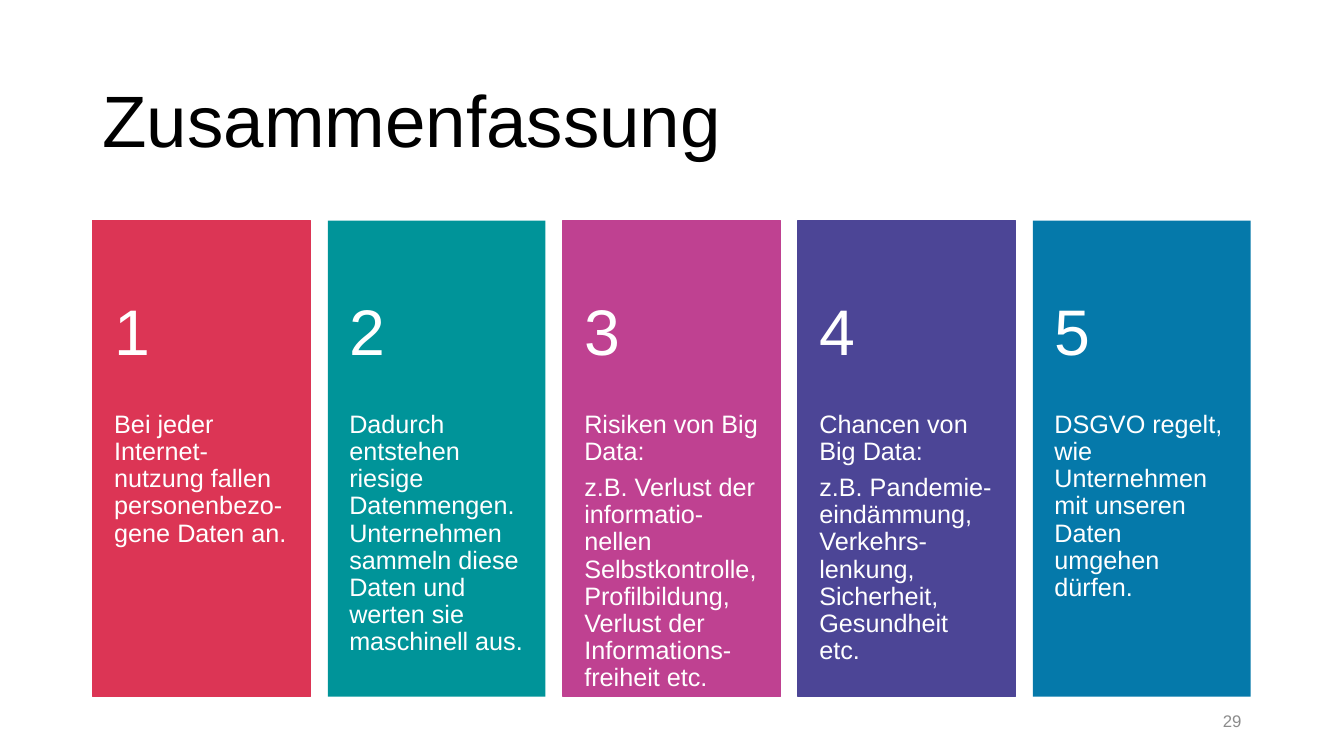
from pptx import Presentation
from pptx.dml.color import RGBColor
from pptx.enum import shapes, text
from pptx.util import Pt

TITLE = "Zusammenfassung"
PAGE = "29"
CARDS = [
    ("red", ["Bei jeder Internet-nutzung fallen personenbezo-gene Daten an."]),
    ("teal", ["Dadurch entstehen riesige Datenmengen. Unternehmen sammeln diese "
              "Daten und werten sie maschinell aus."]),
    ("pink", ["Risiken von Big Data:",
              "z.B. Verlust der informatio-nellen Selbstkontrolle, Profilbildung, "
              "Verlust der Informations-freiheit etc."]),
    ("violet", ["Chancen von Big Data:",
                "z.B. Pandemie-eindämmung, Verkehrs-lenkung, Sicherheit, "
                "Gesundheit etc."]),
    ("blue", ["DSGVO regelt, wie Unternehmen mit unseren Daten umgehen dürfen."]),
]
COLORS = {"red": "DC3555", "teal": "009499", "pink": "BF4191", "violet": "4C4596",
          "blue": "0579AA", "white": "FFFFFF", "black": "000000", "gray": "8C8C8C"}
OUTLINED = {"red", "pink", "violet"}

LEFT, TOP = 66.3, 157.7
CARD_W, CARD_H, STEP = 155.4, 340, 167.9
NUMBER_TOP, NUMBER_H = 201.6, 74.9
BODY_TOP, BODY_H = 293.8, 203.9
SIDE_INSET = 15.3
LINE_SPACING = 0.9


def rgb(name):
    return RGBColor.from_string(COLORS[name])


def write(sp, paragraphs, size, color, align=text.PP_ALIGN.LEFT,
          anchor=text.MSO_ANCHOR.MIDDLE, insets=(7.2, 3.6, 7.2, 3.6),
          spacing=LINE_SPACING, after=0):
    tf = sp.text_frame
    tf.word_wrap = True
    tf.auto_size = text.MSO_AUTO_SIZE.NONE
    tf.vertical_anchor = anchor
    tf.margin_left, tf.margin_top, tf.margin_right, tf.margin_bottom = map(Pt, insets)
    for i, line in enumerate(paragraphs):
        p = tf.add_paragraph() if i else tf.paragraphs[0]
        p.alignment = align
        p.space_after = Pt(after)
        p.line_spacing = spacing
        r = p.add_run()
        r.text = line
        r.font.name = "Arial"
        r.font.size = Pt(size)
        r.font.color.rgb = rgb(color)


def add_text(slide, left, top, width, height, paragraphs, **fmt):
    sp = slide.shapes.add_textbox(Pt(left), Pt(top), Pt(width), Pt(height))
    write(sp, paragraphs, **fmt)


def add_card(slide, index, color, paragraphs):
    left = LEFT + index * STEP
    sp = slide.shapes.add_shape(shapes.MSO_SHAPE.RECTANGLE,
                                Pt(left), Pt(TOP), Pt(CARD_W), Pt(CARD_H))
    sp.shadow.inherit = False
    sp.fill.solid()
    sp.fill.fore_color.rgb = rgb(color)
    if color in OUTLINED:
        sp.line.color.rgb = rgb(color)
        sp.line.width = Pt(1)
    else:
        sp.line.fill.background()
    add_text(slide, left, BODY_TOP, CARD_W, BODY_H, paragraphs,
             size=18, color="white", anchor=text.MSO_ANCHOR.TOP,
             insets=(SIDE_INSET, 0, SIDE_INSET, 26), after=6.3)
    add_text(slide, left, NUMBER_TOP, CARD_W, NUMBER_H, [str(index + 1)],
             size=46, color="white", insets=(SIDE_INSET, 13, SIDE_INSET, 13))


def main():
    prs = Presentation()
    prs.slide_width, prs.slide_height = Pt(960), Pt(540)
    slide = prs.slides.add_slide(prs.slide_layouts[5])
    title = slide.shapes.title
    title.left, title.top, title.width, title.height = map(Pt, (66, 44, 828, 89))
    write(title, [TITLE], size=52, color="black")
    for i, (color, paragraphs) in enumerate(CARDS):
        add_card(slide, i, color, paragraphs)
    add_text(slide, 678, 500.5, 216, 28.75, [PAGE], size=12, color="gray",
             align=text.PP_ALIGN.RIGHT, spacing=1.0, after=6)
    prs.save("out.pptx")


if __name__ == "__main__":
    main()
